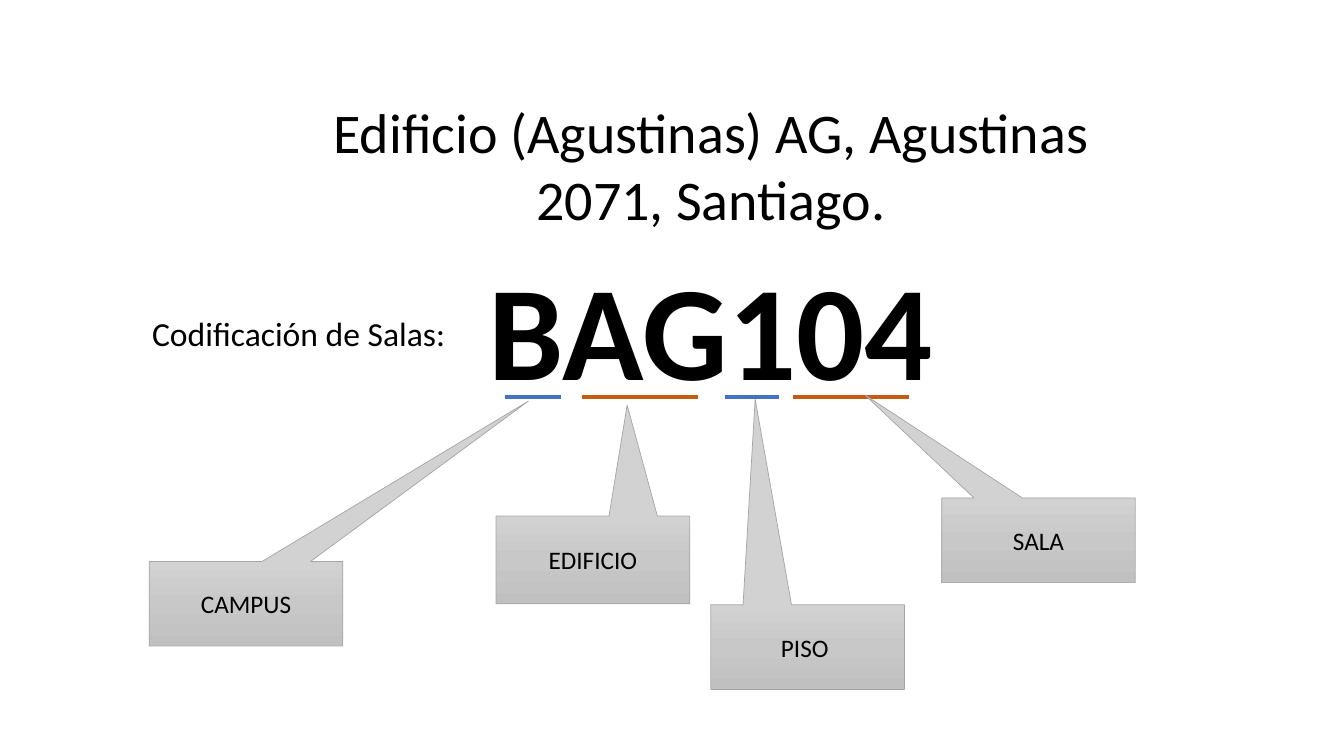
import copy

import pptx
import pptx.dml.color
import pptx.enum.shapes
import pptx.enum.text
import pptx.oxml
import pptx.oxml.ns
import pptx.util
from pptx.util import Inches

# Content
FONT = "Calibri"
TITLE = "Edificio (Agustinas) AG, Agustinas 2071, Santiago."
LABEL = "Codificación de Salas: "
CODE = "BAG104"
BLUE, ORANGE = "4472C4", "C55A11"
UNDERLINE_Y = 3.94
UNDERLINES = [  # start x, end x, colour
    (5.01, 5.56, BLUE),
    (5.77, 6.92, ORANGE),
    (7.19, 7.73, BLUE),
    (7.87, 9.02, ORANGE),
]
CALLOUT_W = 1.92
CALLOUTS = [  # text, left, top, height, pointer tip
    ("CAMPUS", 1.48, 5.57, 0.84, (5.24, 3.98)),
    ("EDIFICIO", 4.92, 5.12, 0.87, (6.22, 4.02)),
    ("PISO ", 7.05, 6, 0.84, (7.49, 3.96)),
    ("SALA", 9.34, 4.94, 0.84, (8.58, 3.92)),
]
GRADIENT = ["D2D2D2", "C8C8C8", "C0C0C0"]


def rgb(color):
    return pptx.dml.color.RGBColor.from_string(color)


def place(sp, left, top, width, height):
    sp.left, sp.top = Inches(left), Inches(top)
    sp.width, sp.height = Inches(width), Inches(height)


def write(sp, text, size, bold=False, anchor=pptx.enum.text.MSO_ANCHOR.TOP):
    tf = sp.text_frame
    tf.word_wrap = True
    tf.auto_size = pptx.enum.text.MSO_AUTO_SIZE.NONE
    tf.vertical_anchor = anchor
    p = tf.paragraphs[0]
    p.text = text
    p.alignment = pptx.enum.text.PP_ALIGN.CENTER
    r = p.runs[0]
    r.font.name, r.font.size, r.font.bold = FONT, pptx.util.Pt(size), bold
    r.font.color.rgb = rgb("000000")
    return r


def add_text(shapes, box, text, size, bold=False):
    sp = shapes.add_textbox(*map(Inches, box))
    return write(sp, text, size, bold)


def add_underline(shapes, x1, x2, color):
    line = shapes.add_connector(
        pptx.enum.shapes.MSO_CONNECTOR.STRAIGHT,
        Inches(x1), Inches(UNDERLINE_Y), Inches(x2), Inches(UNDERLINE_Y))
    line.line.color.rgb = rgb(color)
    line.line.width = pptx.util.Pt(3)
    pptx.oxml.ns.qn("a:effectLst")
    line._element.spPr.append(pptx.oxml.parse_xml(
        f'<a:effectLst {pptx.oxml.ns.nsdecls("a")}/>'))


def fill_gradient(sp):
    sp.fill.gradient()
    sp.fill.gradient_angle = 270  # top to bottom
    stops = sp._element.spPr.find(".//" + pptx.oxml.ns.qn("a:gsLst"))
    stops.insert(1, copy.deepcopy(stops[0]))
    for i, (stop, color) in enumerate(zip(sp.fill.gradient_stops, GRADIENT)):
        stop.position = i / (len(GRADIENT) - 1)
        stop.color.rgb = rgb(color)


def add_callout(shapes, text, left, top, height, tip):
    sp = shapes.add_shape(
        pptx.enum.shapes.MSO_SHAPE.RECTANGULAR_CALLOUT,
        Inches(left), Inches(top), Inches(CALLOUT_W), Inches(height))
    # Pointer offsets are fractions of the size, measured from the centre
    sp.adjustments[0] = (tip[0] - left) / CALLOUT_W - 0.5
    sp.adjustments[1] = (tip[1] - top) / height - 0.5
    sp.shadow.inherit = False
    fill_gradient(sp)
    sp.line.color.rgb = rgb("A5A5A5")
    sp.line.width = pptx.util.Pt(0.5)
    write(sp, text, 18, anchor=pptx.enum.text.MSO_ANCHOR.MIDDLE)


def main():
    prs = pptx.Presentation()
    prs.slide_width, prs.slide_height = Inches(13.33), Inches(7.5)
    s = prs.slides.add_slide(prs.slide_layouts[5])

    # Title and label
    place(s.shapes.title, 2.99, 0.92, 8.12, 1.45)
    write(s.shapes.title, TITLE, 40)
    add_text(s.shapes, (1.17, 3.05, 3.66, 1.18), LABEL, 24)

    # Room code, outlined in white, with its underlines
    group = s.shapes.add_group_shape()
    r = add_text(group.shapes, (3.8, 2.39, 6.5, 1.72), CODE, 96, bold=True)
    r.font._element.insert(0, pptx.oxml.parse_xml(
        f'<a:ln {pptx.oxml.ns.nsdecls("a")} w="9525"><a:solidFill>'
        '<a:srgbClr val="FFFFFF"/></a:solidFill></a:ln>'))
    for underline in UNDERLINES:
        add_underline(group.shapes, *underline)

    # Callouts explaining each part of the code
    for callout in CALLOUTS:
        add_callout(s.shapes, *callout)

    prs.save("out.pptx")


if __name__ == "__main__":
    main()
